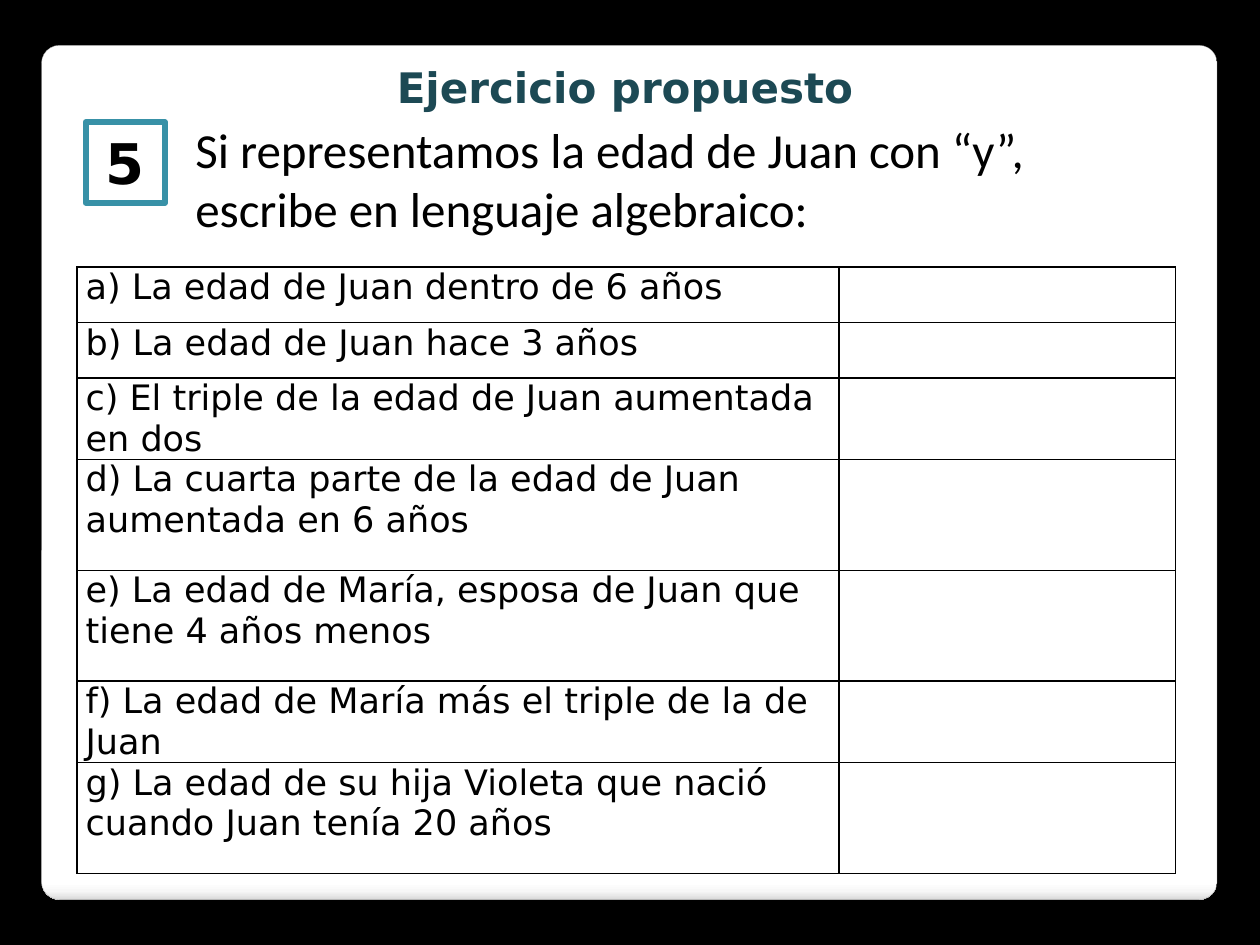
from dataclasses import dataclass

from lxml import etree
from pptx import Presentation
from pptx.dml.color import RGBColor
from pptx.enum.shapes import MSO_SHAPE
from pptx.enum.text import MSO_ANCHOR, MSO_AUTO_SIZE, PP_ALIGN
from pptx.oxml import parse_xml
from pptx.oxml.ns import qn
from pptx.util import Inches, Pt

CENTER, LEFT = PP_ALIGN.CENTER, PP_ALIGN.LEFT
TOP, MIDDLE = MSO_ANCHOR.TOP, MSO_ANCHOR.MIDDLE
RECT, ROUNDED = MSO_SHAPE.RECTANGLE, MSO_SHAPE.ROUNDED_RECTANGLE
NO_FIT = MSO_AUTO_SIZE.NONE
A_NS = "http://schemas.openxmlformats.org/drawingml/2006/main"
SANS, BODY = "DejaVu Sans", "Calibri"
COLORS = {
    "black": "000000",
    "white": "FFFFFF",
    "title": "1C4954",
    "badge": "3891A7",
    "panel_line": "A4A4A4",
    "panel_low": "F7F7F7",
    "panel_edge": "DADADA",
}
PANEL_STOPS = [(0, "white"), (98, "white"), (99, "panel_low"), (100, "panel_edge")]
COLUMN_WIDTHS = [6.05, 2.67]
ROW_UNIT = 0.44


@dataclass
class Exercise:
    text: str
    units: int = 1


EXERCISES = [
    Exercise("a) La edad de Juan dentro de 6 años"),
    Exercise("b) La edad de Juan hace 3 años"),
    Exercise("c) El triple de la edad de Juan aumentada en dos"),
    Exercise("d) La cuarta parte de la edad de Juan aumentada en 6 años", 2),
    Exercise("e) La edad de María, esposa de Juan que tiene 4 años menos", 2),
    Exercise("f) La edad de María más el triple de la de Juan"),
    Exercise("g) La edad de su hija Violeta que nació cuando Juan tenía 20 años", 2),
]


def rgb(name: str) -> RGBColor:
    return RGBColor.from_string(COLORS[name])


def write(tf, text: str, *, size: float, font: str = SANS, color: str = "black",
          bold: bool = False, align=LEFT, anchor=TOP, space: float = 0) -> None:
    tf.word_wrap = True
    tf.vertical_anchor = anchor
    p = tf.paragraphs[0]
    p.alignment = align
    p.space_before = p.space_after = Pt(space)
    r = p.add_run()
    r.text = text
    r.font.size = Pt(size)
    r.font.name = font
    r.font.bold = bold
    r.font.color.rgb = rgb(color)


def place(shape, left: float, top: float, width: float, height: float) -> None:
    shape.left, shape.top = Inches(left), Inches(top)
    shape.width, shape.height = Inches(width), Inches(height)


def add_box(s, kind, box: tuple, line: str, width: float):
    sp = s.shapes.add_shape(kind, *map(Inches, box))
    sp.shadow.inherit = False
    sp.fill.solid()
    sp.fill.fore_color.rgb = rgb("white")
    sp.line.color.rgb = rgb(line)
    sp.line.width = Pt(width)
    return sp


def add_panel(s) -> None:
    sp = add_box(s, ROUNDED, (0.33, 0.36, 9.33, 6.78), "panel_line", 0.16)
    sp.adjustments[0] = 0.021
    stops = "".join(
        f'<a:gs pos="{pos * 1000}"><a:srgbClr val="{COLORS[name]}"/></a:gs>'
        for pos, name in PANEL_STOPS
    )
    gradient = parse_xml(
        f'<a:gradFill xmlns:a="{A_NS}" rotWithShape="1"><a:gsLst>{stops}</a:gsLst>'
        '<a:lin ang="5400000" scaled="0"/></a:gradFill>'
    )
    spPr = sp._element.spPr
    spPr.replace(spPr.find(qn("a:solidFill")), gradient)
    spPr.find(qn("a:effectLst")).append(parse_xml(
        f'<a:outerShdw xmlns:a="{A_NS}" blurRad="{Pt(6)}" dist="{Pt(4)}" dir="5400000">'
        f'<a:srgbClr val="{COLORS["black"]}"><a:alpha val="25000"/></a:srgbClr></a:outerShdw>'
    ))
    s.shapes._spTree.insert(2, sp._element)


def add_borders(cell) -> None:
    tcPr = cell._tc.get_or_add_tcPr()
    for side in ("lnL", "lnR", "lnT", "lnB"):
        ln = etree.SubElement(tcPr, qn(f"a:{side}"), w=str(Pt(1)))
        fill = etree.SubElement(ln, qn("a:solidFill"))
        etree.SubElement(fill, qn("a:srgbClr"), val=COLORS["black"])


def add_exercises(s, exercises: list[Exercise]) -> None:
    height = ROW_UNIT * sum(e.units for e in exercises)
    box = (0.61, 2.12, sum(COLUMN_WIDTHS), height)
    table = s.shapes.add_table(len(exercises), 2, *map(Inches, box)).table
    table.first_row = table.horz_banding = False
    for column, width in zip(table.columns, COLUMN_WIDTHS):
        column.width = Inches(width)
    for row, exercise in zip(table.rows, exercises):
        row.height = Inches(ROW_UNIT * exercise.units)
        for cell in row.cells:
            add_borders(cell)
            cell.fill.background()
            cell.margin_left = cell.margin_right = Inches(0.07)
            cell.margin_top = cell.margin_bottom = 0
        write(row.cells[0].text_frame, exercise.text, size=20, space=3)


def main() -> None:
    prs = Presentation()
    prs.slide_width, prs.slide_height = Inches(10), Inches(7.5)
    s = prs.slides.add_slide(prs.slide_layouts[1])
    s.background.fill.solid()
    s.background.fill.fore_color.rgb = rgb("black")
    add_panel(s)

    title, body = s.shapes.title, s.placeholders[1]
    place(title, 0.35, 0.44, 9.22, 0.5)
    title.text_frame.auto_size = NO_FIT
    write(title.text_frame, "Ejercicio propuesto", size=24, color="title",
          bold=True, align=CENTER, anchor=MIDDLE)

    place(body, 1.45, 0.9, 7.87, 1.04)
    body.text_frame.auto_size = NO_FIT
    write(body.text_frame,
          "Si representamos la edad de Juan con “y”, escribe en lenguaje algebraico:",
          size=28, font=BODY, space=6)
    pPr = body.text_frame.paragraphs[0]._p.get_or_add_pPr()
    pPr.set("marL", "0")
    pPr.set("indent", "0")
    etree.SubElement(pPr, qn("a:buNone"))

    badge = add_box(s, RECT, (0.68, 0.97, 0.63, 0.64), "badge", 3.35)
    write(badge.text_frame, "5", size=32, bold=True, align=CENTER, anchor=MIDDLE)
    add_exercises(s, EXERCISES)
    prs.save("out.pptx")


if __name__ == "__main__":
    main()
